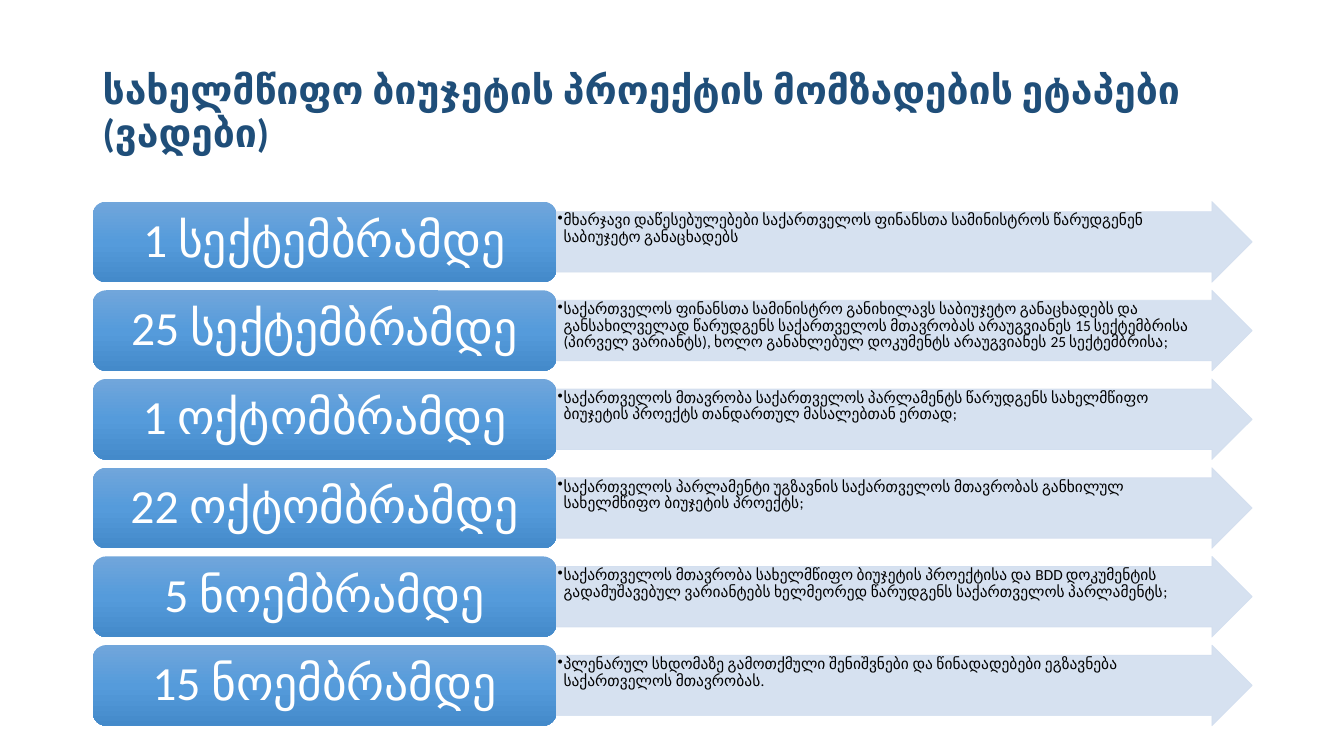
from copy import deepcopy

from lxml import etree
from pptx import Presentation
from pptx.dml.color import RGBColor
from pptx.enum.shapes import MSO_SHAPE
from pptx.enum.text import MSO_ANCHOR, PP_ALIGN
from pptx.oxml.ns import qn
from pptx.util import Inches, Pt

ROUND = MSO_SHAPE.ROUNDED_RECTANGLE
ARROW = MSO_SHAPE.RIGHT_ARROW
TOP, MIDDLE = MSO_ANCHOR.TOP, MSO_ANCHOR.MIDDLE
LEFT, CENTER = PP_ALIGN.LEFT, PP_ALIGN.CENTER
FONT = "Calibri"
PALE = "D2DEEF"
BLUES = [(0, "71A6DB"), (0.5, "559BDB"), (1, "448ACA")]
TITLE = "სახელმწიფო ბიუჯეტის პროექტის მომზადების ეტაპები (ვადები)"
STAGES = [
    ("1 სექტემბრამდე",
     "მხარჯავი დაწესებულებები საქართველოს ფინანსთა სამინისტროს წარუდგენენ "
     "საბიუჯეტო განაცხადებს"),
    ("25 სექტემბრამდე",
     "საქართველოს ფინანსთა სამინისტრო განიხილავს საბიუჯეტო განაცხადებს და "
     "განსახილველად წარუდგენს საქართველოს მთავრობას არაუგვიანეს 15 სექტემბრისა "
     "(პირველ ვარიანტს), ხოლო განახლებულ დოკუმენტს არაუგვიანეს 25 სექტემბრისა;"),
    ("1 ოქტომბრამდე",
     "საქართველოს მთავრობა საქართველოს პარლამენტს წარუდგენს სახელმწიფო "
     "ბიუჯეტის პროექტს თანდართულ მასალებთან ერთად;"),
    ("22 ოქტომბრამდე",
     "საქართველოს პარლამენტი უგზავნის საქართველოს მთავრობას განხილულ "
     "სახელმწიფო ბიუჯეტის პროექტს;"),
    ("5 ნოემბრამდე",
     "საქართველოს მთავრობა სახელმწიფო ბიუჯეტის პროექტისა და BDD დოკუმენტის "
     "გადამუშავებულ ვარიანტებს ხელმეორედ წარუდგენს საქართველოს პარლამენტს;"),
    ("15 ნოემბრამდე",
     "პლენარულ სხდომაზე გამოთქმული შენიშვნები და წინადადებები ეგზავნება "
     "საქართველოს მთავრობას."),
]


def paint(color, tone):
    """Set a colour format from a hex string."""
    color.rgb = RGBColor.from_string(tone)


def write(shape, text, size, tone, align, anchor, insets, bold=False):
    """Put one styled paragraph in a shape and return it."""
    frame = shape.text_frame
    frame.word_wrap = True
    frame.vertical_anchor = anchor
    (frame.margin_left, frame.margin_top,
     frame.margin_right, frame.margin_bottom) = map(Inches, insets)
    para = frame.paragraphs[0]
    para.text = text
    para.alignment = align
    para.line_spacing = 0.9
    para.font.name = FONT
    para.font.size = Pt(size)
    para.font.bold = bold
    paint(para.font.color, tone)
    return para


def add_title(slide, x, y, w, h):
    """Place the slide heading in its box."""
    box = slide.shapes.add_textbox(*map(Inches, (x, y, w, h)))
    write(box, TITLE, 28, "1F4E79", LEFT, MIDDLE, (0.1, 0.05, 0.1, 0.05), True)


def add_arrow(slide, text, x, y, w, h):
    """Place a pale arrow that holds a bulleted note."""
    arrow = slide.shapes.add_shape(ARROW, *map(Inches, (x, y, w, h)))
    arrow.shadow.inherit = False
    arrow.adjustments[0] = 0.75
    arrow.adjustments[1] = 0.5
    arrow.fill.solid()
    paint(arrow.fill.fore_color, PALE)
    paint(arrow.line.color, PALE)
    arrow.line.width = Pt(0.5)
    for color in arrow.element.spPr.iter(qn("a:srgbClr")):
        etree.SubElement(color, qn("a:alpha")).set("val", "90000")
    para = write(arrow, text, 11, "000000", LEFT, TOP, (0.01, 0.01, 0.21, 0.01))
    props = para._p.get_or_add_pPr()
    props.set("marL", str(Inches(0.06)))
    props.set("indent", str(Inches(-0.06)))
    bullet = etree.Element(qn("a:buChar"), char="•")
    props.find(qn("a:lnSpc")).addnext(bullet)


def add_label(slide, text, x, y, w, h):
    """Place a rounded gradient block with a deadline."""
    block = slide.shapes.add_shape(ROUND, *map(Inches, (x, y, w, h)))
    block.shadow.inherit = False
    block.line.fill.background()
    block.fill.gradient()
    block.fill.gradient_angle = 270
    stops = block.element.spPr.find(".//" + qn("a:gsLst"))
    stops.append(deepcopy(stops[0]))
    for stop, (place, tone) in zip(block.fill.gradient_stops, BLUES):
        stop.position = place
        paint(stop.color, tone)
    write(block, text, 34, "FFFFFF", CENTER, MIDDLE, (0.14, 0.07, 0.14, 0.07))


def add_stages(slide, x, y, w, h):
    """Stack the stages evenly, each a label and an arrow."""
    step = h / (len(STAGES) - 1 / 11)
    tall = step * 10 / 11
    split = w * 0.4
    for row, (date, note) in enumerate(STAGES):
        top = y + row * step
        add_arrow(slide, note, x + split, top, w - split, tall)
        add_label(slide, date, x, top, split, tall)


def main():
    """Build the slide and save it."""
    deck = Presentation()
    deck.slide_width = Inches(13.33)
    deck.slide_height = Inches(7.5)
    slide = deck.slides.add_slide(deck.slide_layouts[6])
    add_title(slide, 0.92, 0.4, 11.73, 1.45)
    add_stages(slide, 0.92, 2, 11.5, 5.2)
    deck.save("out.pptx")


if __name__ == "__main__":
    main()
